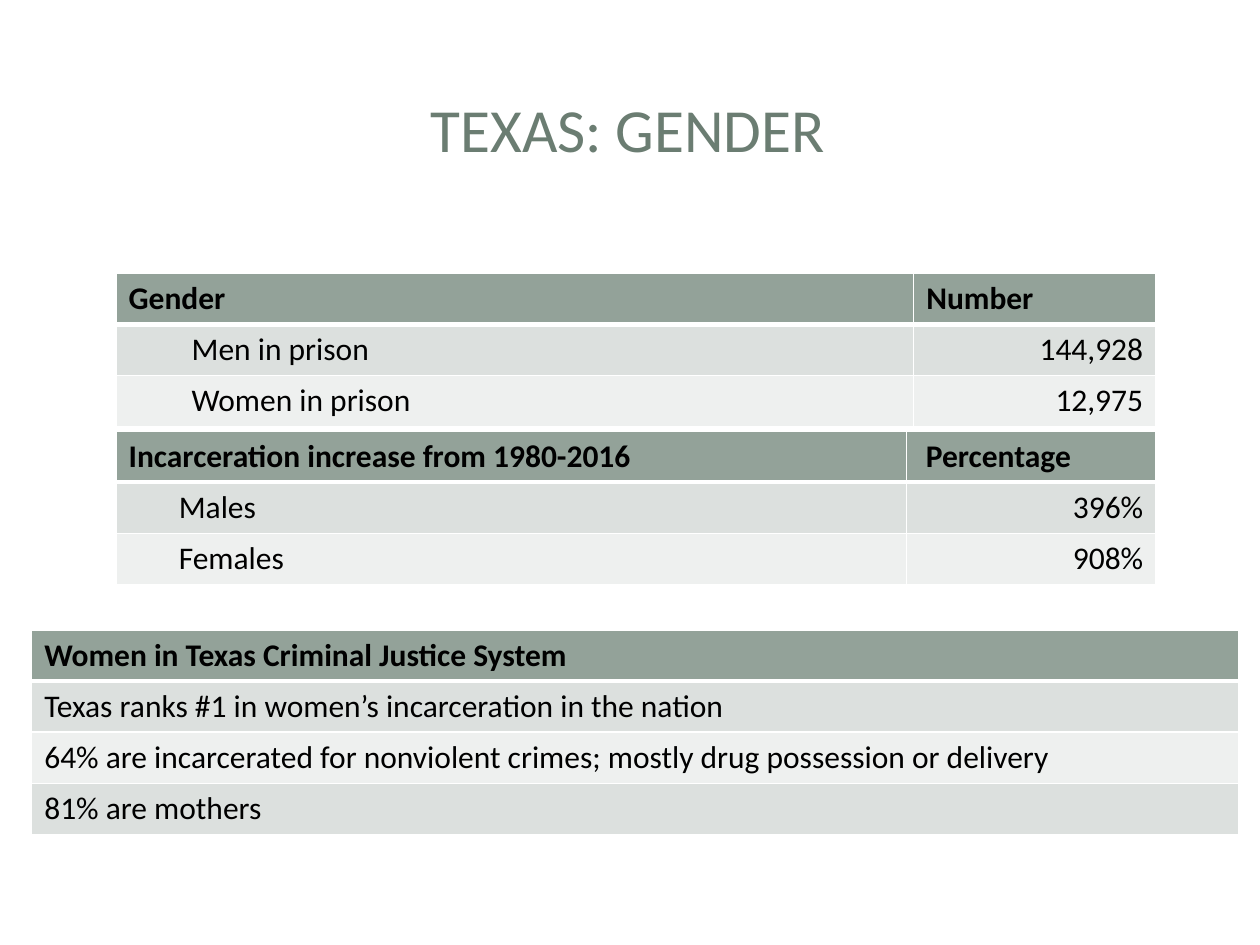
from lxml import etree
from pptx import Presentation
from pptx.dml.color import RGBColor
from pptx.enum.text import MSO_ANCHOR, PP_ALIGN
from pptx.oxml.ns import qn
from pptx.util import Cm, Pt

LEFT, CENTER, RIGHT = PP_ALIGN.LEFT, PP_ALIGN.CENTER, PP_ALIGN.RIGHT
MIDDLE = MSO_ANCHOR.MIDDLE
COLORS = {
    "title": "6B7D72",
    "text": "000000",
    "header": "93A299",
    "odd_row": "DCE0DE",
    "even_row": "EEF0EF",
    "border": "FFFFFF",
}
ROW_HEIGHT = 1.03


def write_text(frame, text, size=18, color="text", bold=False, align=LEFT, indent=0):
    paragraph = frame.paragraphs[0]
    paragraph.alignment = align
    if indent:
        paragraph._p.get_or_add_pPr().set("marL", str(Cm(indent)))
    run = paragraph.add_run()
    run.text = text
    run.font.name = "Calibri"
    run.font.size = Pt(size)
    run.font.bold = bold
    run.font.color.rgb = RGBColor.from_string(COLORS[color])


def style_cell(cell, fill, top, bottom):
    """Fill the cell and draw its borders; top and bottom are widths in points."""
    properties = cell._tc.get_or_add_tcPr()
    for side, width in (("L", 1), ("R", 1), ("T", top), ("B", bottom)):
        line = etree.SubElement(properties, qn(f"a:ln{side}"), w=str(Pt(width)))
        line_fill = etree.SubElement(line, qn("a:solidFill"))
        etree.SubElement(line_fill, qn("a:srgbClr"), val=COLORS["border"])
    cell.fill.solid()
    cell.fill.fore_color.rgb = RGBColor.from_string(COLORS[fill])


prs = Presentation()
prs.slide_width, prs.slide_height = Cm(25.4), Cm(19.05)
slide = prs.slides.add_slide(prs.slide_layouts[6])

title = slide.shapes.add_textbox(Cm(1.19), Cm(1.14), Cm(22.94), Cm(2.9)).text_frame
title.word_wrap = True
title.vertical_anchor = MIDDLE
write_text(title, "TEXAS: GENDER", size=35, color="title", align=CENTER)

# left, top, column widths, label indent, header indent of the last column, rows
tables = [
    (2.34, 5.51, [16.08, 4.88], 1.27, 0, [
        ["Gender", "Number"],
        ["Men in prison", "144,928"],
        ["Women in prison", "12,975"],
    ]),
    (2.34, 8.69, [15.93, 5.03], 1.01, 0.14, [
        ["Incarceration increase from 1980-2016", "Percentage"],
        ["Males", "396%"],
        ["Females", "908%"],
    ]),
    (0.64, 12.7, [24.33], 0, 0, [
        ["Women in Texas Criminal Justice System"],
        ["Texas ranks #1 in women’s incarceration in the nation"],
        ["64% are incarcerated for nonviolent crimes; mostly drug possession or delivery"],
        ["81% are mothers"],
    ]),
]

for left, top, widths, label_indent, header_indent, rows in tables:
    table = slide.shapes.add_table(
        len(rows), len(widths), Cm(left), Cm(top),
        Cm(sum(widths)), Cm(ROW_HEIGHT * len(rows)),
    ).table
    for column, width in zip(table.columns, widths):
        column.width = Cm(width)
    for r, row in enumerate(rows):
        table.rows[r].height = Cm(ROW_HEIGHT)
        is_header = r == 0
        fill = "header" if is_header else "odd_row" if r % 2 else "even_row"
        for c, text in enumerate(row):
            is_label = c == 0
            if is_header:
                indent = 0 if is_label else header_indent
            else:
                indent = label_indent if is_label else 0
            cell = table.cell(r, c)
            write_text(
                cell.text_frame, text, bold=is_header, indent=indent,
                align=LEFT if is_header or is_label else RIGHT,
            )
            style_cell(cell, fill, top=3 if r == 1 else 1, bottom=3 if is_header else 1)

prs.save("out.pptx")
